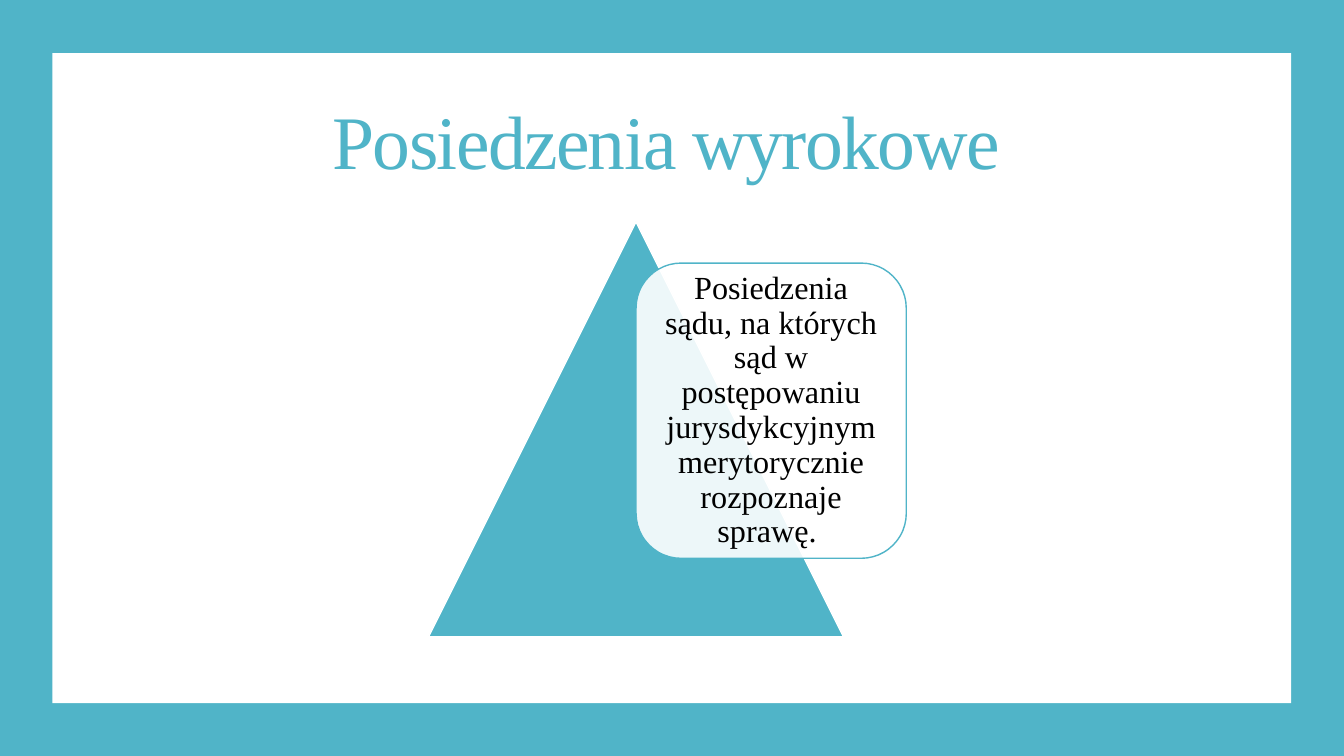
"""Build the slide on judgment sessions: framed title, triangle and definition card."""
from dataclasses import dataclass
from typing import Optional

from pptx import Presentation
from pptx.dml.color import RGBColor
from pptx.enum import shapes, text
from pptx.oxml import ns
from pptx import util as u
from lxml import etree

COLORS = {"teal": "50B4C8", "white": "FFFFFF", "black": "000000"}
FONT = "Times New Roman"


@dataclass(frozen=True)
class Panel:
    preset: shapes.MSO_SHAPE
    left: float
    top: float
    width: float
    height: float
    fill: str
    line: Optional[str] = None
    opacity: int = 100


@dataclass(frozen=True)
class Wording:
    content: str
    size: float
    color: str
    line_spacing: float
    tracking: int = 0


def draw_panel(slide, panel: Panel):
    shape = slide.shapes.add_shape(
        panel.preset, *map(u.Cm, (panel.left, panel.top, panel.width, panel.height)))
    shape.shadow.inherit = False
    shape.fill.solid()
    shape.fill.fore_color.rgb = RGBColor.from_string(COLORS[panel.fill])
    if panel.opacity < 100:
        color = shape.fill._xPr.find(".//" + ns.qn("a:srgbClr"))
        etree.SubElement(color, ns.qn("a:alpha"), val=str(panel.opacity * 1000))
    if panel.line:
        shape.line.color.rgb = RGBColor.from_string(COLORS[panel.line])
        shape.line.width = u.Pt(1)
    else:
        shape.line.fill.background()
    return shape


def write(frame, wording: Wording) -> None:
    frame.word_wrap = True
    frame.vertical_anchor = text.MSO_ANCHOR.MIDDLE
    paragraph = frame.paragraphs[0]
    paragraph.alignment = text.PP_ALIGN.CENTER
    paragraph.line_spacing = wording.line_spacing
    run = paragraph.add_run()
    run.text = wording.content
    run.font.name = FONT
    run.font.size = u.Pt(wording.size)
    run.font.color.rgb = RGBColor.from_string(COLORS[wording.color])
    if wording.tracking:
        run.font._element.set("spc", str(wording.tracking))


def main() -> None:
    deck = Presentation()
    deck.slide_width, deck.slide_height = u.Cm(33.87), u.Cm(19.05)
    slide = deck.slides.add_slide(deck.slide_layouts[6])
    preset = shapes.MSO_SHAPE

    for panel in (
        Panel(preset.RECTANGLE, 0, 0, 33.87, 19.05, "teal"),
        Panel(preset.RECTANGLE, 1.32, 1.34, 31.22, 16.38, "white"),
        Panel(preset.ISOSCELES_TRIANGLE, 10.8, 5.59, 10.46, 10.46, "teal", "white"),
    ):
        draw_panel(slide, panel)

    title = slide.shapes.add_textbox(*map(u.Cm, (1.83, 1.4, 29.92, 4.6)))
    write(title.text_frame, Wording("Posiedzenia wyrokowe", 54, "teal", 0.85, -120))

    definition = draw_panel(slide, Panel(
        preset.ROUNDED_RECTANGLE, 16.03, 6.63, 6.81, 7.44, "white", "teal", 90))
    frame = definition.text_frame
    frame.margin_left = frame.margin_right = u.Cm(0.25)
    frame.margin_top = frame.margin_bottom = u.Cm(0.25)
    write(frame, Wording(
        "Posiedzenia sądu, na których sąd w postępowaniu jurysdykcyjnym "
        "merytorycznie rozpoznaje sprawę. ", 23, "black", 0.9))

    deck.save("out.pptx")


if __name__ == "__main__":
    main()
